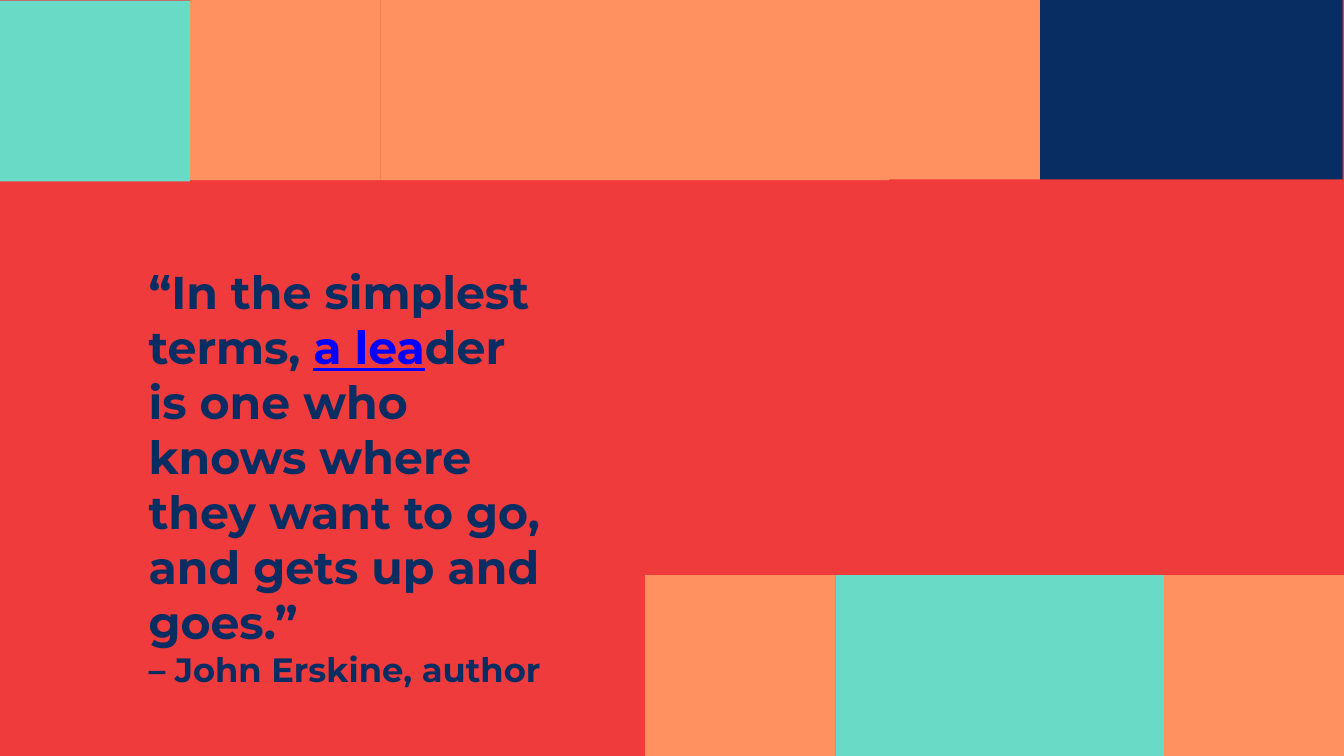
from pptx import Presentation
from pptx.dml.color import RGBColor
from pptx.enum.shapes import MSO_SHAPE as SHAPE
from pptx.enum.text import MSO_AUTO_SIZE as AUTO_SIZE
from pptx.util import Emu, Pt

PX = 9144  # EMU per px, 100 px to the inch
RED, ORANGE, TEAL, NAVY, BLUE = "EF3B3B", "FF9060", "68DAC5", "082D63", "0000FF"
FONT = "Montserrat"

# Colour blocks: left, top, width, height, colour
TOP_BLOCKS = [
    (1323, 0, 225, 267, ORANGE),
    (1548, 0, 450, 267, NAVY),
    (1055, -1, 268, 269, ORANGE),
    (566, -1, 489, 269, ORANGE),
    (283, -1, 283, 269, ORANGE),
    (0, 1, 283, 269, TEAL),
]
BOTTOM_BLOCKS = [
    (960, 856, 283, 269, ORANGE),
    (1732, 856, 268, 269, ORANGE),
    (1243, 856, 489, 269, TEAL),
]


def px(*lengths):
    return [Emu(n * PX) for n in lengths]


def rgb(color):
    return RGBColor.from_string(color)


def add_block(s, left, top, width, height, color):
    sp = s.shapes.add_shape(SHAPE.RECTANGLE, *px(left, top, width, height))
    sp.shadow.inherit = False
    sp.fill.solid()
    sp.fill.fore_color.rgb = rgb(color)
    sp.line.fill.background()


def add_text_box(s, left, top, width, height):
    tf = s.shapes.add_textbox(*px(left, top, width, height)).text_frame
    tf.margin_left = tf.margin_top = tf.margin_right = tf.margin_bottom = 0
    tf.word_wrap = True
    tf.auto_size = AUTO_SIZE.SHAPE_TO_FIT_TEXT
    return tf


def fill_paragraph(p, runs, size, spacing):
    """Write runs of (text, colour, underlined) in one size."""
    p.line_spacing = Pt(spacing)
    p.font.name, p.font.size, p.font.bold = FONT, Pt(size), True
    for text, color, underlined in runs:
        r = p.add_run()
        r.text = text
        r.font.color.rgb = rgb(color)
        r.font.underline = underlined


def main():
    prs = Presentation()
    prs.slide_width, prs.slide_height = px(2000, 1125)
    s = prs.slides.add_slide(prs.slide_layouts[6])
    s.background.fill.solid()
    s.background.fill.fore_color.rgb = rgb(RED)

    # Colour bands
    for block in BOTTOM_BLOCKS + TOP_BLOCKS:
        add_block(s, *block)

    # Quote and its author
    tf = add_text_box(s, 221, 393, 589, 547)
    quote = [
        ("“In the simplest terms, ", NAVY, False),
        ("a lea", BLUE, True),
        ("der is one who knows where they want to go, and gets up and goes.”", NAVY, False),
    ]
    fill_paragraph(tf.paragraphs[0], quote, 49.1, 58.9)
    fill_paragraph(tf.add_paragraph(), [("– John Erskine, author", NAVY, False)], 36.1, 43.3)

    prs.save("out.pptx")


if __name__ == "__main__":
    main()
